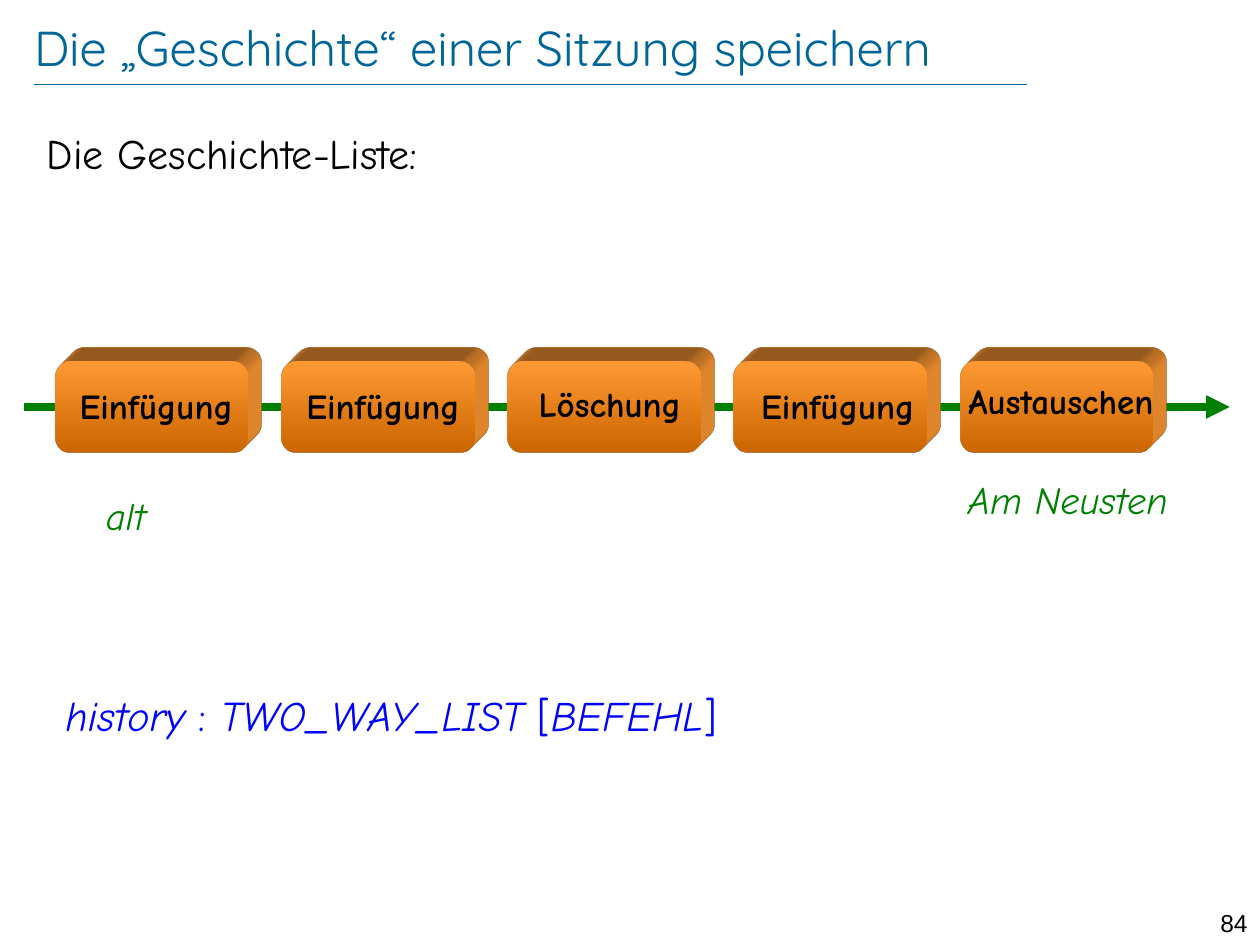
from lxml.etree import fromstring
from pptx import Presentation
from pptx.dml.color import RGBColor
from pptx.enum.shapes import MSO_CONNECTOR, MSO_SHAPE
from pptx.enum.text import MSO_ANCHOR, PP_ALIGN
from pptx.oxml import parse_xml
from pptx.oxml.ns import nsdecls
from pptx.util import Inches, Pt

# Content
TITLE = "Die „Geschichte“ einer Sitzung speichern"
LEAD = "Die Geschichte-Liste:"
PAGE = "84"
# label, centre x, top
STEPS = [
    ("Einfügung", 1.24, 3.0),
    ("Einfügung", 3.04, 3.0),
    ("Löschung", 4.84, 2.99),
    ("Einfügung", 6.65, 3.0),
    ("Austauschen", 8.42, 2.96),
]
# text, left, top, width
ENDS = [("alt", 0.32, 3.86, 1.36), ("Am Neusten", 7.4, 3.73, 2.15)]
# text, italic
CODE = [("history ", True), (": ", False), ("TWO_WAY_LIST ", True),
        ("[", False), ("BEFEHL", True), ("]", False)]

THEME = {
    "head": "Quicksand", "body": "Comic Neue", "num": "Arial",
    "blue": "006699", "black": "000000", "green": "008000",
    "code": "0000FF", "light": "FF9933", "dark": "CC6600",
    "title": 28, "text": 24, "end": 22, "step": 20, "page": 14,
}
BOX = {"left": 0.44, "top": 2.87, "wide": 1.53, "high": 0.72, "pitch": 1.795}


def tint(name):
    return RGBColor.from_string(THEME[name])


def write(shape, text, size="text", color="black", face="body",
          align=PP_ALIGN.LEFT, anchor=MSO_ANCHOR.TOP, bold=False,
          italic=False, inset=None):
    """Fill a shape with one paragraph; text is a string or (text, italic) runs."""
    frame = shape.text_frame
    frame.word_wrap = True
    frame.vertical_anchor = anchor
    if inset is not None:
        frame.margin_left = frame.margin_right = Inches(inset)
        frame.margin_top = frame.margin_bottom = Inches(inset)
    para = frame.paragraphs[0]
    para.alignment = align
    para.space_before = Pt(0)
    runs = [(text, italic)] if isinstance(text, str) else text
    for part, slant in runs:
        run = para.add_run()
        run.text = part
        font = run.font
        font.name, font.size = THEME[face], Pt(THEME[size])
        font.bold, font.italic = bold, slant
        font.color.rgb = tint(color)
    return para


def place(shape, left, top, wide, high):
    shape.left, shape.top = Inches(left), Inches(top)
    shape.width, shape.height = Inches(wide), Inches(high)


def label(left, top, wide, high, text, **form):
    box = slide.shapes.add_textbox(
        Inches(left), Inches(top), Inches(wide), Inches(high))
    write(box, text, **form)


def rule(x1, x2, y, color, width):
    line = slide.shapes.add_connector(
        MSO_CONNECTOR.STRAIGHT, Inches(x1), Inches(y), Inches(x2), Inches(y))
    line.line.color.rgb = tint(color)
    line.line.width = Pt(width)
    line._element.spPr.append(parse_xml(f"<a:effectLst {nsdecls('a')}/>"))
    return line


def block(left):
    """Draw a rounded box with a gradient face and oblique depth."""
    box = slide.shapes.add_shape(
        MSO_SHAPE.ROUNDED_RECTANGLE, Inches(left), Inches(BOX["top"]),
        Inches(BOX["wide"]), Inches(BOX["high"]))
    box.shadow.inherit = False
    box.line.fill.background()
    box.fill.gradient()
    box.fill.gradient_angle = 270
    for stop, name, pos in zip(box.fill.gradient_stops, ("light", "dark"), (0, 1)):
        stop.color.rgb = tint(name)
        stop.position = pos
    props = box._element.spPr
    props.append(fromstring(
        f'<a:scene3d {nsdecls("a")}><a:camera prst="legacyObliqueTopRight"/>'
        '<a:lightRig rig="legacyFlat3" dir="b"/></a:scene3d>'))
    props.append(fromstring(
        f'<a:sp3d {nsdecls("a")} extrusionH="{Inches(0.31)}" '
        'prstMaterial="legacyMatte"><a:extrusionClr>'
        f'<a:srgbClr val="{THEME["light"]}"/></a:extrusionClr></a:sp3d>'))


deck = Presentation()
deck.slide_width, deck.slide_height = Inches(10), Inches(7.5)
slide = deck.slides.add_slide(deck.slide_layouts[1])

# Title, rule and page number
title, body = slide.placeholders
place(title, 0.27, 0.13, 8.69, 0.48)
write(title, TITLE, size="title", color="blue", face="head",
      anchor=MSO_ANCHOR.MIDDLE, inset=0)
rule(0.27, 8.15, 0.67, "blue", 0.25)
label(9.3, 7.16, 0.7, 0.24, PAGE, size="page", face="num", align=PP_ALIGN.RIGHT)

# Lead line without a bullet
place(body, 0.27, 0.96, 9.4, 6.17)
props = write(body, LEAD)._p.get_or_add_pPr()
props.set("marL", "0")
props.set("indent", "0")
props.append(parse_xml(f"<a:buNone {nsdecls('a')}/>"))

# Declaration
label(0.42, 5.42, 9.17, 0.5, CODE, color="code")

# Time arrow behind the boxes
arrow = rule(0.19, 9.76, 3.23, "green", 4.5)
arrow.line._get_or_add_ln().append(
    parse_xml(f'<a:tailEnd {nsdecls("a")} type="triangle"/>'))

# Boxes first, then their labels
for i in range(len(STEPS)):
    block(BOX["left"] + i * BOX["pitch"])
for text, mid, top in STEPS:
    label(mid - 0.95, top, 1.9, 0.44, text, size="step", bold=True,
          align=PP_ALIGN.CENTER)

# Ends of the list
for text, left, top, wide in ENDS:
    label(left, top, wide, 0.47, text, size="end", color="green", italic=True,
          align=PP_ALIGN.CENTER)

deck.save("out.pptx")
